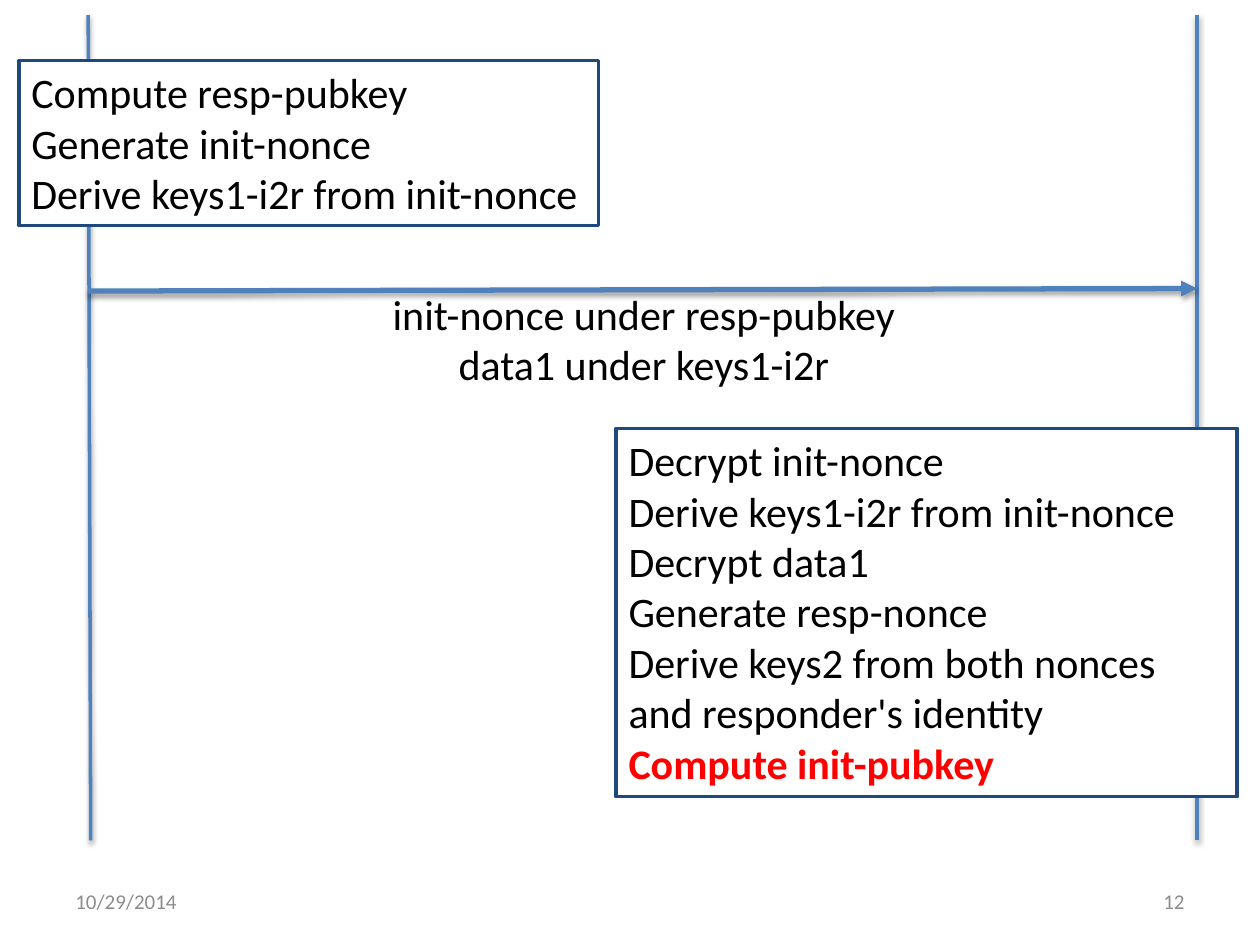
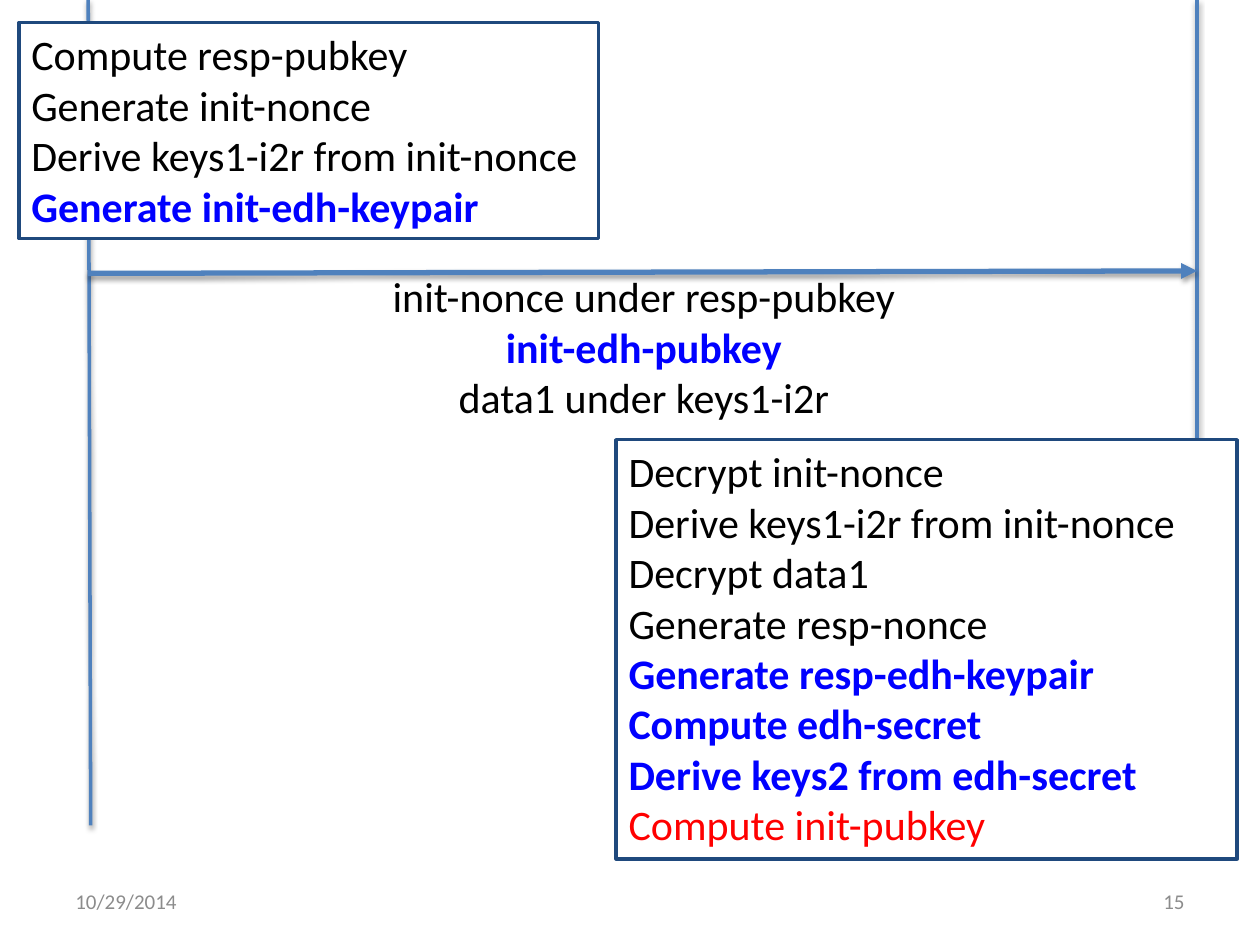
from lxml import etree
from pptx import Presentation
from pptx.dml.color import RGBColor
from pptx.enum.shapes import MSO_CONNECTOR, MSO_SHAPE
from pptx.enum.text import MSO_ANCHOR, MSO_AUTO_SIZE, PP_ALIGN
from pptx.oxml import parse_xml
from pptx.oxml.ns import nsdecls, qn
from pptx.util import Inches, Pt

STRAIGHT = MSO_CONNECTOR.STRAIGHT
RECTANGLE = MSO_SHAPE.RECTANGLE
LEFT, CENTER, RIGHT = PP_ALIGN.LEFT, PP_ALIGN.CENTER, PP_ALIGN.RIGHT
TOP, MIDDLE = MSO_ANCHOR.TOP, MSO_ANCHOR.MIDDLE
GROW = MSO_AUTO_SIZE.SHAPE_TO_FIT_TEXT

FONT = "Calibri"
BLACK, WHITE, GRAY = "000000", "FFFFFF", "8C8C8C"
RED, BLUE = "FF0000", "0000FF"
LINE_BLUE, BORDER_BLUE = "4F81BD", "1F497D"

BODY_SIZE = 24
INITIATOR_X, RESPONDER_X = 0.7, 9.5
SLANT = 0.02
LIFELINE_LENGTH = 6.55

INITIATOR_STEPS = ["Compute resp-pubkey", "Generate init-nonce",
                   "Derive keys1-i2r from init-nonce"]
RESPONDER_STEPS = ["Decrypt init-nonce", "Derive keys1-i2r from init-nonce",
                   "Decrypt data1", "Generate resp-nonce"]
NONCE_MESSAGE = "init-nonce under resp-pubkey"
DATA_MESSAGE = "data1 under keys1-i2r"


def rgb(value):
    return RGBColor.from_string(value)


def text_height(lines):
    return 0.1 + len(lines) * BODY_SIZE * 1.21 / 72


def add_shadow(c):
    c._element.spPr.append(parse_xml(
        f'<a:effectLst {nsdecls("a")}>'
        f'<a:outerShdw blurRad="{Pt(3.1)}" dist="{Pt(1.6)}" dir="5400000" rotWithShape="0">'
        '<a:srgbClr val="000000"><a:alpha val="38000"/></a:srgbClr>'
        '</a:outerShdw></a:effectLst>'))


def add_line(slide, x1, y1, x2, y2, width=2, arrow=False):
    c = slide.shapes.add_connector(
        STRAIGHT, Inches(x1), Inches(y1), Inches(x2), Inches(y2))
    c.line.color.rgb = rgb(LINE_BLUE)
    c.line.width = Pt(width)
    if arrow:
        etree.SubElement(c.line._get_or_add_ln(), qn("a:tailEnd"), type="triangle")
    add_shadow(c)


def write(tf, lines, size=BODY_SIZE, color=BLACK, align=LEFT, anchor=TOP):
    tf.word_wrap = True
    tf.vertical_anchor = anchor
    for i, line in enumerate(lines):
        text, line_color, bold = (line, color, False) if isinstance(line, str) else line
        p = tf.paragraphs[0] if i == 0 else tf.add_paragraph()
        p.alignment = align
        r = p.add_run()
        r.text = text
        r.font.name = FONT
        r.font.size = Pt(size)
        r.font.bold = bold
        r.font.color.rgb = rgb(line_color)


def add_text(slide, x, y, w, h, lines, **text_format):
    sp = slide.shapes.add_textbox(Inches(x), Inches(y), Inches(w), Inches(h))
    write(sp.text_frame, lines, **text_format)
    return sp


def add_steps(slide, x, y, w, lines):
    sp = slide.shapes.add_shape(
        RECTANGLE, Inches(x), Inches(y), Inches(w), Inches(text_height(lines)))
    sp.shadow.inherit = False
    sp.fill.solid()
    sp.fill.fore_color.rgb = rgb(WHITE)
    sp.line.color.rgb = rgb(BORDER_BLUE)
    sp.line.width = Pt(2)
    write(sp.text_frame, lines)
    sp.text_frame.auto_size = GROW


def add_lifelines(slide, top):
    bottom = top + LIFELINE_LENGTH
    add_line(slide, INITIATOR_X, top, INITIATOR_X + SLANT, bottom)
    add_line(slide, RESPONDER_X, top, RESPONDER_X, bottom)


def add_message(slide, y, lines):
    add_line(slide, INITIATOR_X, y, RESPONDER_X, y - SLANT, width=3, arrow=True)
    x = INITIATOR_X + SLANT
    sp = add_text(slide, x, y - 0.07, RESPONDER_X - x, text_height(lines),
                  lines, align=CENTER)
    sp.text_frame.auto_size = GROW


def add_footer(slide, number):
    for x, text, align in ((0.5, "10/29/2014", LEFT), (7.17, number, RIGHT)):
        add_text(slide, x, 6.95, 2.33, 0.4, [text], size=12, color=GRAY,
                 align=align, anchor=MIDDLE)


def add_exchange(prs, number, lifeline_y, message_y, message,
                 initiator_y, initiator, responder_y, responder):
    slide = prs.slides.add_slide(prs.slide_layouts[6])
    add_lifelines(slide, lifeline_y)
    add_message(slide, message_y, message)
    add_steps(slide, 0.15, initiator_y, 4.6, initiator)
    add_steps(slide, 4.89, responder_y, 4.93, responder)
    add_footer(slide, number)


def main():
    prs = Presentation()
    prs.slide_width, prs.slide_height = Inches(10), Inches(7.5)
    add_exchange(
        prs, "12", lifeline_y=0.12,
        message_y=2.31, message=[NONCE_MESSAGE, DATA_MESSAGE],
        initiator_y=0.48, initiator=INITIATOR_STEPS,
        responder_y=3.4, responder=RESPONDER_STEPS + [
            "Derive keys2 from both nonces",
            "and responder's identity",
            ("Compute init-pubkey", RED, True)])
    add_exchange(
        prs, "15", lifeline_y=0,
        message_y=2.17,
        message=[NONCE_MESSAGE, ("init-edh-pubkey", BLUE, True), DATA_MESSAGE],
        initiator_y=0.18,
        initiator=INITIATOR_STEPS + [("Generate init-edh-keypair", BLUE, True)],
        responder_y=3.49, responder=RESPONDER_STEPS + [
            ("Generate resp-edh-keypair", BLUE, True),
            ("Compute edh-secret", BLUE, True),
            ("Derive keys2 from edh-secret", BLUE, True),
            ("Compute init-pubkey", RED, False)])
    prs.save("out.pptx")


if __name__ == "__main__":
    main()
